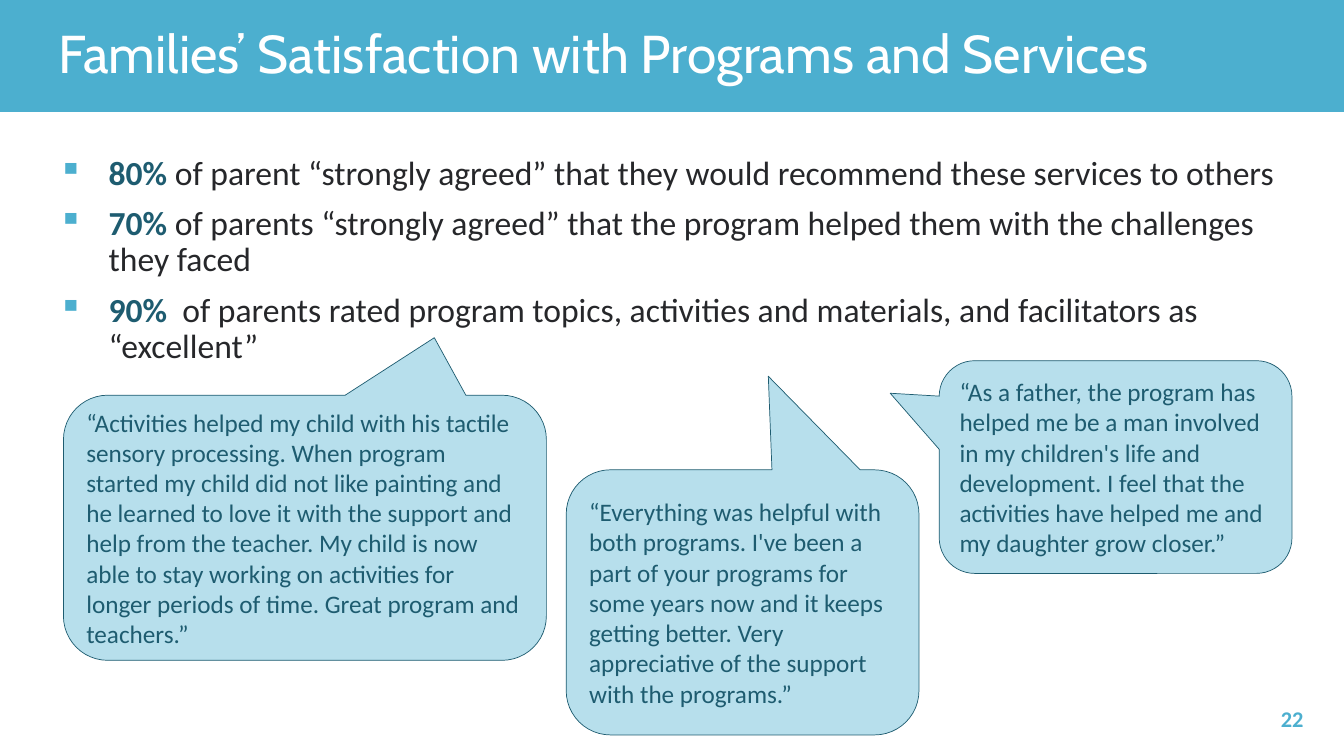
import pptx
import pptx.util
import pptx.dml.color
import pptx.enum.shapes
import pptx.enum.text
import lxml.etree
from dataclasses import dataclass

Cm, Pt = pptx.util.Cm, pptx.util.Pt
SHAPE = pptx.enum.shapes.MSO_SHAPE
ALIGN = pptx.enum.text.PP_ALIGN
ANCHOR = pptx.enum.text.MSO_ANCHOR


@dataclass(frozen=True)
class Theme:
    sky: str = "4CAFCF"
    pale: str = "B7DFEC"
    deep: str = "1E5C70"
    ink: str = "26272A"
    white: str = "FFFFFF"
    head_font: str = "Cabin"
    text_font: str = "Calibri"
    head_size: int = 38
    list_size: int = 24
    quote_size: int = 18
    page_size: int = 16


def tint(code):
    return pptx.dml.color.RGBColor.from_string(code)


def write(par, text, *, font, size, color, bold=False):
    """Add one run of text with its format."""
    run = par.add_run()
    run.text = text
    run.font.name = font
    run.font.size = Pt(size)
    run.font.bold = bold
    run.font.color.rgb = tint(color)


class Deck:
    """Holds the theme and the current slide."""

    def __init__(self, theme):
        self.theme = theme
        self.show = pptx.Presentation()
        self.show.slide_width, self.show.slide_height = Cm(33.87), Cm(19.05)
        self.slide = self.show.slides.add_slide(self.show.slide_layouts[6])

    def shape(self, kind, box, fill, line=None):
        item = self.slide.shapes.add_shape(kind, *map(Cm, box))
        item.shadow.inherit = False
        item.fill.solid()
        item.fill.fore_color.rgb = tint(fill)
        if line:
            item.line.color.rgb = tint(line)
            item.line.width = Pt(0.5)
        else:
            item.line.fill.background()
        return item

    def frame(self, box, anchor=ANCHOR.MIDDLE):
        frame = self.slide.shapes.add_textbox(*map(Cm, box)).text_frame
        frame.word_wrap = True
        frame.vertical_anchor = anchor
        return frame

    def title(self, text, box):
        look = self.theme
        par = self.frame(box).paragraphs[0]
        par.line_spacing = 0.9
        write(par, text, font=look.head_font, size=look.head_size, color=look.white)

    def page(self, text, box):
        look = self.theme
        par = self.frame(box).paragraphs[0]
        par.alignment = ALIGN.RIGHT
        write(par, text, font=look.text_font, size=look.page_size,
              color=look.sky, bold=True)

    def bullet(self, par):
        props = par._p.get_or_add_pPr()
        props.set("marL", str(Cm(1.27)))
        props.set("indent", str(-Cm(1.27)))
        space = pptx.oxml.ns.qn
        hue = lxml.etree.SubElement(props, space("a:buClr"))
        lxml.etree.SubElement(hue, space("a:srgbClr"), val=self.theme.sky)
        lxml.etree.SubElement(props, space("a:buChar"), char="▪")

    def points(self, rows, box):
        look = self.theme
        frame = self.frame(box, ANCHOR.TOP)
        for index, (share, claim) in enumerate(rows):
            par = frame.add_paragraph() if index else frame.paragraphs[0]
            self.bullet(par)
            par.line_spacing = 0.9
            if index:
                par.space_before = Pt(10)
            style = dict(font=look.text_font, size=look.list_size)
            write(par, share, color=look.deep, bold=True, **style)
            write(par, claim, color=look.ink, **style)

    def quote(self, text, box, tip):
        look = self.theme
        bubble = self.shape(SHAPE.ROUNDED_RECTANGULAR_CALLOUT, box,
                            look.pale, look.deep)
        for index, value in enumerate((*tip, 0.167)):
            bubble.adjustments[index] = value
        frame = bubble.text_frame
        frame.word_wrap = True
        frame.vertical_anchor = ANCHOR.MIDDLE
        par = frame.paragraphs[0]
        par.alignment = ALIGN.LEFT
        write(par, text, font=look.text_font, size=look.quote_size, color=look.deep)


POINTS = [
    ("80% ", "of parent “strongly agreed” that they would recommend these "
             "services to others"),
    ("70% ", "of parents “strongly agreed” that the program helped them with "
             "the challenges they faced"),
    ("90%  ", "of parents rated program topics, activities and materials, and "
              "facilitators as “excellent”"),
]

# Each quote: words, box in cm, tip of the tail as a share of the box
QUOTES = [
    ("“As a father, the program has helped me be a man involved in my "
     "children's life and development. I feel that the activities have helped "
     "me and my daughter grow closer.”",
     (23.67, 9.09, 8.89, 5.36), (-0.639, -0.347)),
    ("“Activities helped my child with his tactile sensory processing. When "
     "program started my child did not like painting and he learned to love it "
     "with the support and help from the teacher. My child is now able to stay "
     "working on activities for longer periods of time. Great program and "
     "teachers.”",
     (1.6, 9.96, 12.17, 6.68), (0.268, -0.717)),
    ("“Everything was helpful with both programs. I've been a part of your "
     "programs for some years now and it keeps getting better. Very "
     "appreciative of the support with the programs.”",
     (14.27, 11.84, 8.89, 6.68), (0.073, -0.853)),
]


def main():
    deck = Deck(Theme())

    # Header band, page number and title
    deck.shape(SHAPE.RECTANGLE, (0, 0, 33.87, 2.82), deck.theme.sky)
    deck.page("22", (25.48, 17.6, 7.62, 1.02))
    deck.title("Families’ Satisfaction with Programs and Services",
               (1.22, 0.69, 31.34, 1.45))

    # Survey results
    deck.points(POINTS, (1.22, 3.81, 31.47, 6.15))

    # What parents said
    for text, box, tip in QUOTES:
        deck.quote(text, box, tip)

    deck.show.save("out.pptx")


if __name__ == "__main__":
    main()
